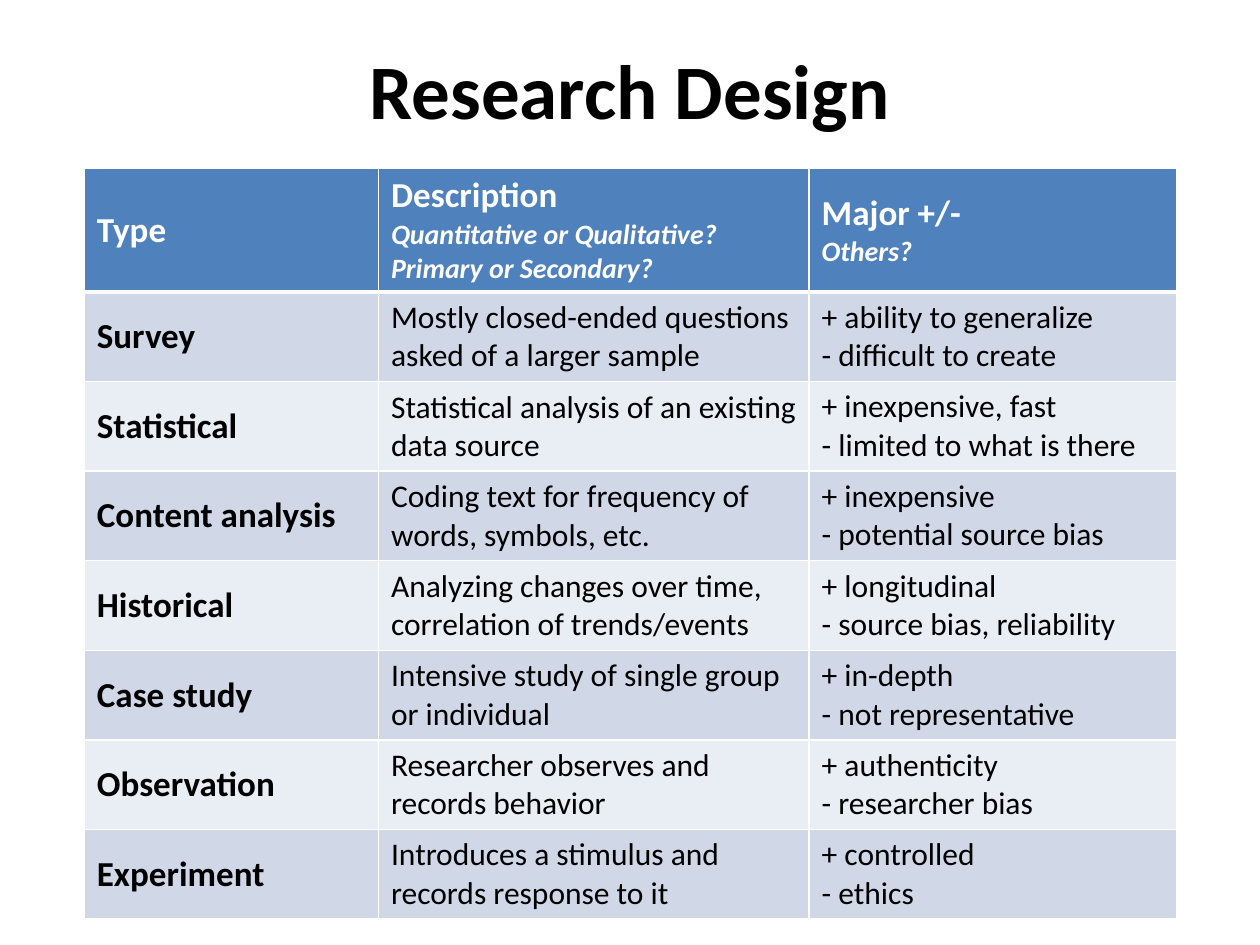
from dataclasses import dataclass

from lxml import etree
from pptx import Presentation
from pptx import util as u
from pptx.dml.color import RGBColor
from pptx.enum import text as t
from pptx.oxml import ns

FONT = "Calibri"
BLACK = RGBColor(0x00, 0x00, 0x00)
WHITE = RGBColor(0xFF, 0xFF, 0xFF)
BLUE = RGBColor(0x4F, 0x81, 0xBD)
BANDS = (RGBColor(0xD0, 0xD8, 0xE8), RGBColor(0xE9, 0xED, 0xF4))
WIDTHS = (5.93, 8.68, 7.41)
HEAD_TALL, ROW_TALL = 1.27, 1.73


@dataclass
class Design:
    kind: str
    about: str
    points: str


DESIGNS = (
    Design("Survey", "Mostly closed-ended questions asked of a larger sample",
           "+ ability to generalize\n- difficult to create"),
    Design("Statistical", "Statistical analysis of an existing data source",
           "+ inexpensive, fast\v- limited to what is there"),
    Design("Content analysis", "Coding text for frequency of words, symbols, etc.",
           "+ inexpensive\v- potential source bias"),
    Design("Historical", "Analyzing changes over time, correlation of trends/events",
           "+ longitudinal\n- source bias, reliability"),
    Design("Case study", "Intensive study of single group or individual",
           "+ in-depth\n- not representative"),
    Design("Observation", "Researcher observes and records behavior",
           "+ authenticity\v- researcher bias"),
    Design("Experiment", "Introduces a stimulus and records response to it",
           "+ controlled\n- ethics"),
)


def write(frame, text: str, size: int = 18, bold: bool = False,
          italic: bool = False, color: RGBColor = BLACK) -> None:
    for i, block in enumerate(text.split("\n")):
        para = frame.add_paragraph() if i else frame.paragraphs[-1]
        for j, line in enumerate(block.split("\v")):
            if j:
                para.add_line_break()
                etree.SubElement(para._p[-1], ns.qn("a:rPr"), sz=str(size * 100))
            if line:
                run = para.add_run()
                run.text = line
                font = run.font
                font.name, font.size = FONT, u.Pt(size)
                font.bold, font.italic = bold, italic
                font.color.rgb = color


def edge(cell, side: str, width: float) -> None:
    line = etree.SubElement(cell._tc.get_or_add_tcPr(), ns.qn(f"a:ln{side}"),
                            w=str(u.Pt(width)))
    fill = etree.SubElement(line, ns.qn("a:solidFill"))
    etree.SubElement(fill, ns.qn("a:srgbClr"), val=str(WHITE))


def dress(cell, color: RGBColor, top: float = 1, base: float = 1,
          middle: bool = True) -> None:
    for side, width in zip("LRTB", (1, 1, top, base)):
        edge(cell, side, width)
    cell.fill.solid()
    cell.fill.fore_color.rgb = color
    if middle:
        cell.vertical_anchor = t.MSO_ANCHOR.MIDDLE


def draw_head(cells) -> None:
    big = dict(size=20, bold=True, color=WHITE)
    small = dict(size=16, bold=True, italic=True, color=WHITE)
    for cell in cells:
        dress(cell, BLUE, base=3)
    kind, about, points = (cell.text_frame for cell in cells)
    write(kind, "Type", **big)
    write(about, "Description \v", **big)
    write(about, "Quantitative or Qualitative?\vPrimary or Secondary?", **small)
    write(points, "Major +/-", **big)
    points.add_paragraph()
    write(points, "Others?", **small)


def draw_row(cells, item: Design, color: RGBColor, top: float) -> None:
    kind, about, points = cells
    for cell in cells:
        dress(cell, color, top=top, middle=cell is not points)
    write(kind.text_frame, item.kind, size=20, bold=True)
    write(about.text_frame, item.about)
    write(points.text_frame, item.points)


def main() -> None:
    deck = Presentation()
    deck.slide_width, deck.slide_height = u.Cm(25.4), u.Cm(19.05)
    slide = deck.slides.add_slide(deck.slide_layouts[5])

    title = slide.shapes.title
    title.left, title.top = u.Cm(1.27), u.Cm(0.2)
    title.width, title.height = u.Cm(22.86), u.Cm(3.18)
    title.text_frame.vertical_anchor = t.MSO_ANCHOR.MIDDLE
    title.text_frame.paragraphs[0].alignment = t.PP_ALIGN.CENTER
    write(title.text_frame, "Research Design", size=44, bold=True)

    tall = u.Cm(14.91)
    frame = slide.shapes.add_table(len(DESIGNS) + 1, len(WIDTHS), u.Cm(1.7),
                                   u.Cm(3.39), u.Cm(sum(WIDTHS)), tall)
    table = frame.table
    for col, width in zip(table.columns, WIDTHS):
        col.width = u.Cm(width)
    head, *rows = table.rows
    head.height = u.Cm(HEAD_TALL)
    draw_head(list(head.cells))
    for i, (row, item) in enumerate(zip(rows, DESIGNS)):
        row.height = u.Cm(ROW_TALL)
        draw_row(list(row.cells), item, BANDS[i % 2], 1 if i else 3)
    frame.height = tall

    deck.save("out.pptx")


if __name__ == "__main__":
    main()
